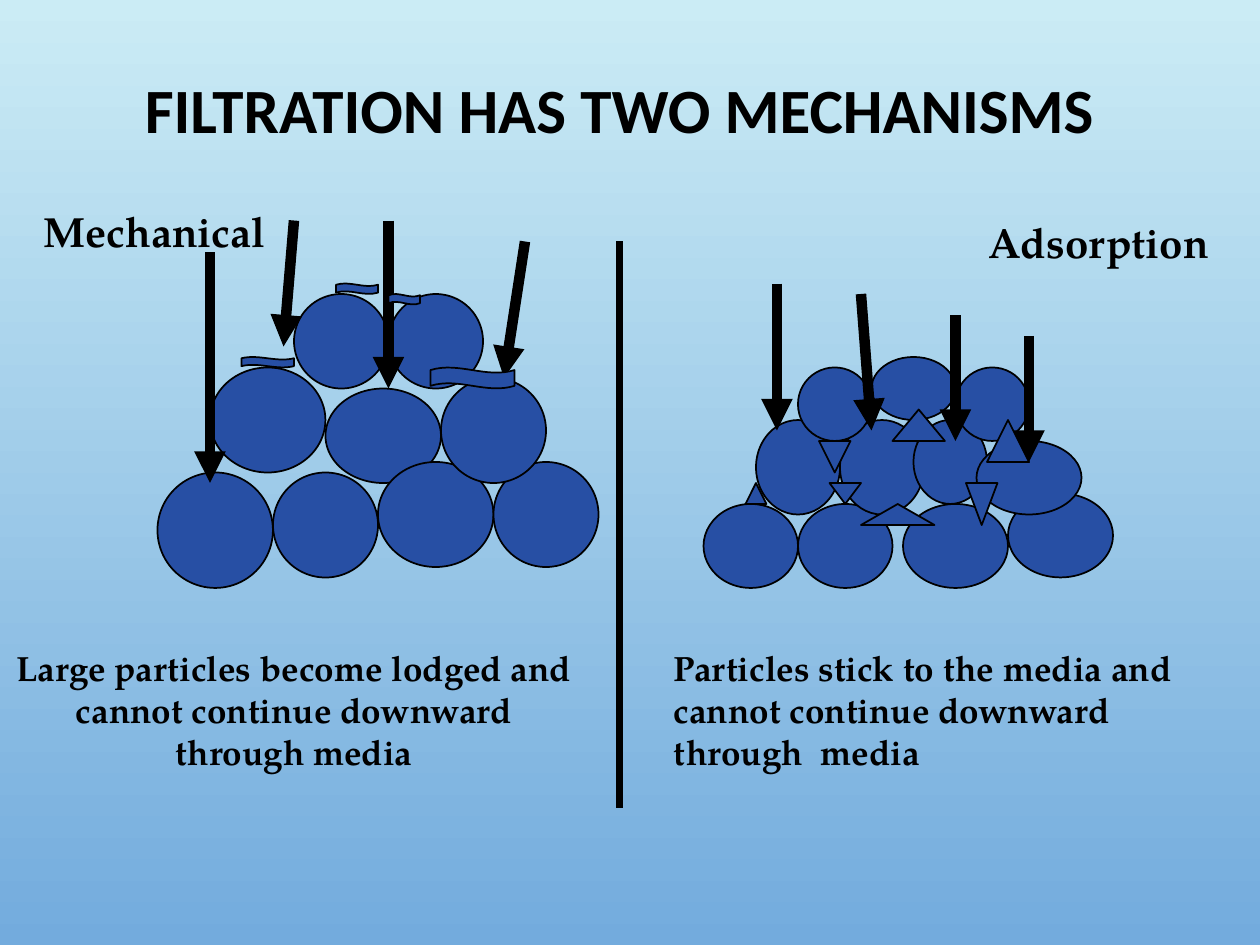
from lxml import etree
from pptx import Presentation
from pptx.dml.color import RGBColor
from pptx.enum.shapes import MSO_CONNECTOR, MSO_SHAPE
from pptx.enum.text import MSO_ANCHOR, MSO_AUTO_SIZE, PP_ALIGN
from pptx.oxml.ns import qn
from pptx.util import Pt

PX = 9525  # EMU per px, 96 px to the inch
BLACK = RGBColor(0x00, 0x00, 0x00)
BLUE = RGBColor(0x27, 0x4F, 0xA4)
SKY = RGBColor(0xCB, 0xEC, 0xF5)
DEEP = RGBColor(0x73, 0xAB, 0xDD)
BALL = MSO_SHAPE.OVAL
WAVE = MSO_SHAPE.WAVE
UP = MSO_SHAPE.FLOWCHART_EXTRACT
DOWN = MSO_SHAPE.FLOWCHART_MERGE
LINE = MSO_CONNECTOR.STRAIGHT
LEFT, CENTER = PP_ALIGN.LEFT, PP_ALIGN.CENTER

prs = Presentation()
prs.slide_width, prs.slide_height = 960 * PX, 720 * PX
slide = prs.slides.add_slide(prs.slide_layouts[5])
shapes = slide.shapes

fill = slide.background.fill
fill.gradient()
fill.gradient_angle = 270
for stop, color in zip(fill.gradient_stops, (SKY, DEEP)):
    stop.color.rgb = color


def add_grains(kind, boxes):
    for box in boxes:
        grain = shapes.add_shape(kind, *(n * PX for n in box))
        grain.shadow.inherit = False
        grain.fill.solid()
        grain.fill.fore_color.rgb = BLUE
        grain.line.color.rgb = BLACK
        grain.line.width = Pt(1)


def add_lines(ends, width, arrow):
    for end in ends:
        line = shapes.add_connector(LINE, *(n * PX for n in end))
        line.line.color.rgb = BLACK
        line.line.width = Pt(width)
        props = line._element.spPr
        if arrow:
            etree.SubElement(props.find(qn("a:ln")), qn("a:tailEnd"), type="triangle")
        etree.SubElement(props, qn("a:effectLst"))


# Title
title = shapes.title
title.left, title.top, title.width, title.height = (n * PX for n in (40, 28, 864, 116))
frame = title.text_frame
frame.text = "FILTRATION HAS TWO MECHANISMS"
frame.vertical_anchor = MSO_ANCHOR.MIDDLE
para = frame.paragraphs[0]
para.alignment = CENTER
para.line_spacing = 0.9
font = para.runs[0].font
font.name, font.size, font.bold = "Calibri", Pt(36), True
font.color.rgb = BLACK

# Mechanical: large flakes caught between the media
add_grains(BALL, [
    (160, 280, 88, 80), (120, 360, 88, 88), (208, 360, 80, 80),
    (248, 296, 88, 72), (288, 352, 88, 80), (224, 224, 72, 72),
    (376, 352, 80, 80), (336, 288, 80, 80), (296, 224, 72, 72),
])
add_lines([
    (224, 168, 216, 264), (296, 168, 296, 296),
    (400, 184, 384, 288), (160, 192, 160, 368),
], 6, True)
add_grains(WAVE, [
    (184, 272, 40, 8), (256, 216, 32, 8), (296, 224, 24, 8), (328, 280, 64, 16),
])

# Divider
add_lines([(472, 184, 472, 616)], 4.5, False)

# Adsorption: small particles stuck to the media
add_grains(BALL, [
    (536, 384, 72, 64), (608, 384, 72, 64), (688, 384, 80, 64), (768, 376, 80, 64),
    (576, 320, 64, 72), (640, 320, 64, 72), (696, 320, 56, 64), (744, 336, 80, 56),
    (608, 280, 56, 56), (664, 272, 64, 48), (728, 280, 56, 56),
])
add_grains(UP, [
    (568, 368, 16, 16), (656, 384, 56, 16), (680, 312, 40, 24), (752, 320, 32, 32),
])
add_grains(DOWN, [(632, 368, 24, 16), (624, 336, 24, 24), (736, 368, 24, 32)])
add_lines([
    (592, 216, 592, 328), (656, 224, 664, 328),
    (728, 240, 728, 336), (784, 256, 784, 352),
], 6, True)

# Headings and captions
for text, box, size, align in [
    ("Mechanical", (24, 152, 216, 48), 24, LEFT),
    ("Adsorption", (744, 160, 216, 48), 24, LEFT),
    ("Large particles become lodged and cannot continue downward through media",
     (0, 488, 448, 107), 20, CENTER),
    ("Particles stick to the media and cannot continue downward through  media",
     (504, 488, 424, 107), 20, LEFT),
]:
    frame = shapes.add_textbox(*(n * PX for n in box)).text_frame
    frame.word_wrap = True
    frame.auto_size = MSO_AUTO_SIZE.SHAPE_TO_FIT_TEXT
    frame.text = text
    para = frame.paragraphs[0]
    para.alignment = align
    font = para.runs[0].font
    font.name, font.size, font.bold = "TeX Gyre Pagella", Pt(size), True
    font.color.rgb = BLACK

prs.save("out.pptx")
